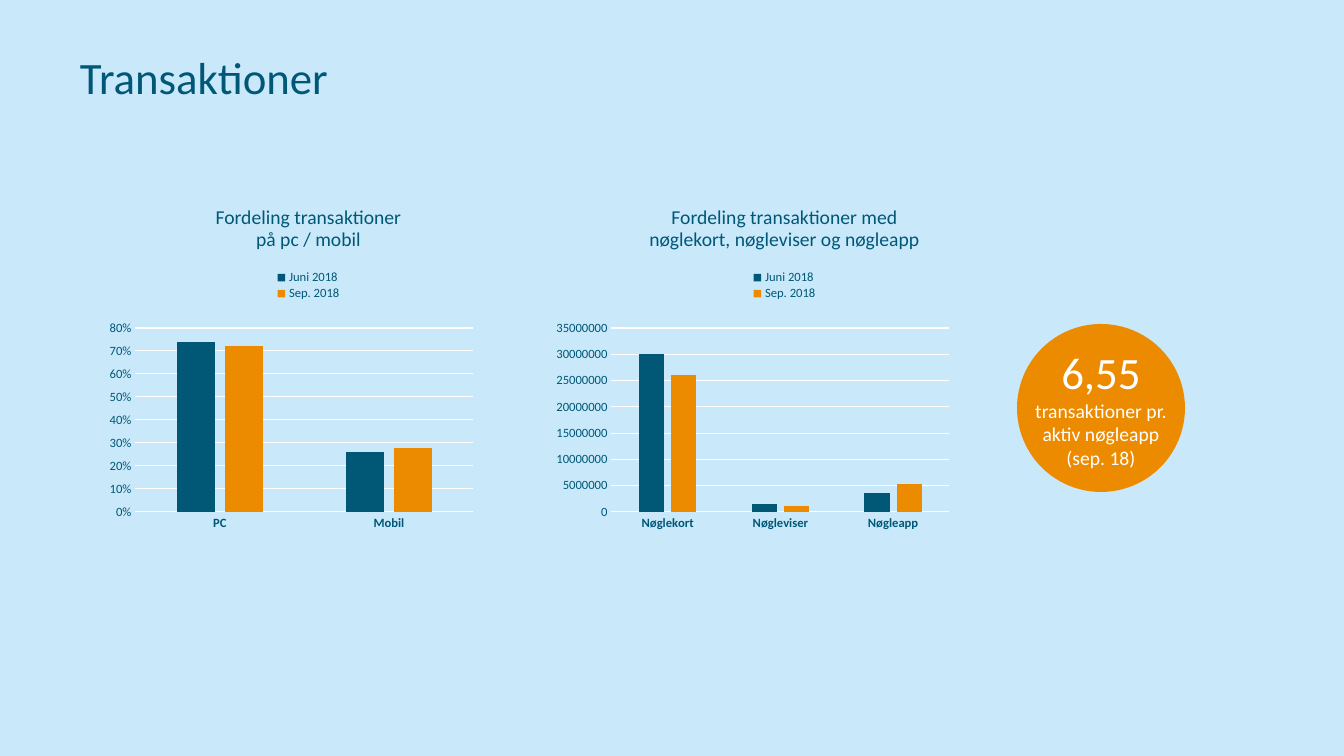
from dataclasses import dataclass

from lxml import etree
from pptx import Presentation
from pptx import util as u
from pptx.chart.data import CategoryChartData
from pptx.dml.color import RGBColor
from pptx.enum import chart as ch
from pptx.enum import shapes, text
from pptx.oxml import parse_xml
from pptx.oxml.ns import nsdecls, qn

EMU_PER_PX = 914400 / 100.8


@dataclass(frozen=True)
class Theme:
    font: str = "Calibri"
    background: RGBColor = RGBColor(0xC9, 0xE9, 0xFB)
    blue: RGBColor = RGBColor(0x00, 0x57, 0x76)
    orange: RGBColor = RGBColor(0xED, 0x8B, 0x00)
    white: RGBColor = RGBColor(0xFF, 0xFF, 0xFF)
    large: int = 32
    body: int = 14
    small: int = 9


THEME = Theme()


def px(length):
    return u.Emu(round(length * EMU_PER_PX))


def style_font(font, size, color, bold=False):
    font.name, font.size, font.bold = THEME.font, u.Pt(size), bold
    font.color.rgb = color


def add_text(slide, box, lines, color, align=text.PP_ALIGN.LEFT,
             spacing=1.0, inset=0, anchor=text.MSO_ANCHOR.TOP):
    """Place a text box; lines holds one (wording, size) pair per paragraph."""
    frame = slide.shapes.add_textbox(*map(px, box)).text_frame
    frame.word_wrap = True
    frame.vertical_anchor = anchor
    frame.margin_left = frame.margin_right = px(inset)
    frame.margin_top = frame.margin_bottom = px(inset // 2)
    for index, (wording, size) in enumerate(lines):
        paragraph = frame.paragraphs[0] if index == 0 else frame.add_paragraph()
        paragraph.text = wording
        paragraph.alignment = align
        paragraph.line_spacing = spacing
        style_font(paragraph.font, size, color)


def set_layout(element, x, y, width, height, inner=False):
    """Fix a chart part's place as fractions of the chart area."""
    for old in element.findall(qn("c:layout")):
        element.remove(old)
    layout = parse_xml(f"<c:layout {nsdecls('c')}><c:manualLayout/></c:layout>")
    values = [("layoutTarget", "inner")] if inner else []
    values += [("xMode", "edge"), ("yMode", "edge"),
               ("x", x), ("y", y), ("w", width), ("h", height)]
    for name, value in values:
        etree.SubElement(layout[0], qn(f"c:{name}")).set("val", str(value))
    # A legend's layout follows its position; a plot area's comes first.
    element.insert(0 if inner else 1, layout)


def style_line(line):
    line.color.rgb = THEME.white
    line.width = u.Pt(0.75)


def style_axes(chart, number_format):
    for axis in (chart.category_axis, chart.value_axis):
        axis.major_tick_mark = axis.minor_tick_mark = ch.XL_TICK_MARK.NONE
        style_font(axis.tick_labels.font, THEME.small, THEME.blue,
                   bold=axis is not chart.value_axis)
    category_axis, value_axis = chart.category_axis, chart.value_axis
    style_font(category_axis.tick_labels.font, THEME.small, THEME.blue, bold=True)
    style_font(value_axis.tick_labels.font, THEME.small, THEME.blue)
    style_line(category_axis.format.line)
    style_line(value_axis.major_gridlines.format.line)
    value_axis.format.line.fill.background()
    value_axis.tick_labels.number_format = number_format
    value_axis.tick_labels.number_format_is_linked = False


def add_column_chart(slide, box, heading, categories, june, september,
                     number_format, maximum, step):
    """Place a heading and, below it, columns for the two months."""
    left, top, width, height = box
    add_text(slide, (left + 72, top, width - 72, 33), [(heading, THEME.body)],
             THEME.blue, text.PP_ALIGN.CENTER, spacing=0.9)

    data = CategoryChartData(number_format=number_format)
    data.categories = categories
    data.add_series("Juni 2018", june)
    data.add_series("Sep. 2018", september)
    chart = slide.shapes.add_chart(
        ch.XL_CHART_TYPE.COLUMN_CLUSTERED,
        *map(px, (left, top + 17, width, height - 17)), data).chart
    style_font(chart.font, THEME.small, THEME.blue)
    chart.has_title = False
    style_axes(chart, number_format)
    chart.value_axis.minimum_scale = 0
    chart.value_axis.maximum_scale = maximum
    chart.value_axis.major_unit = step

    plot = chart.plots[0]
    plot.gap_width, plot.overlap = 219, -27
    plot.vary_by_categories = False
    for series, color in zip(plot.series, (THEME.blue, THEME.orange)):
        series.format.fill.solid()
        series.format.fill.fore_color.rgb = color
    set_layout(chart.plots[0]._element.getparent(), 0.16, 0.28, 0.84, 0.5, inner=True)

    chart.has_legend = True
    legend = chart.legend
    legend.position = ch.XL_LEGEND_POSITION.BOTTOM
    legend.include_in_layout = False
    style_font(legend.font, THEME.small, THEME.blue)
    set_layout(legend._element, 0.5, 0.12, 0.18, 0.09)


def add_key_figure(slide, box):
    left, top, width, height = box
    circle = slide.shapes.add_shape(shapes.MSO_SHAPE.OVAL, *map(px, box))
    circle.shadow.inherit = False
    circle.fill.solid()
    circle.fill.fore_color.rgb = THEME.orange
    circle.line.fill.background()
    lines = [("6,55", THEME.large),
             ("transaktioner pr. aktiv nøgleapp", THEME.body),
             ("(sep. 18)", THEME.body)]
    add_text(slide, (left, top + 15, width, height - 32), lines, THEME.white,
             text.PP_ALIGN.CENTER, inset=10, anchor=text.MSO_ANCHOR.MIDDLE)


def build_transactions_slide(presentation):
    slide = presentation.slides.add_slide(presentation.slide_layouts[6])
    slide.background.fill.solid()
    slide.background.fill.fore_color.rgb = THEME.background
    add_text(slide, (80, 59, 1185, 127), [("Transaktioner", THEME.large)],
             THEME.blue, spacing=0.83)
    add_column_chart(
        slide, (71, 208, 403, 385), "Fordeling transaktioner\vpå pc / mobil",
        ["PC", "Mobil"], (0.74, 0.26), (0.72, 0.28), "0%", 0.8, 0.1)
    add_column_chart(
        slide, (547, 208, 403, 385),
        "Fordeling transaktioner med\vnøglekort, nøgleviser og nøgleapp",
        ["Nøglekort", "Nøgleviser", "Nøgleapp"],
        (30000000, 1500000, 3600000), (26000000, 1100000, 5300000),
        "0", 35000000, 5000000)
    add_key_figure(slide, (1017, 324, 168, 168))


def main():
    presentation = Presentation()
    presentation.slide_width, presentation.slide_height = px(1344), px(756)
    build_transactions_slide(presentation)
    presentation.save("out.pptx")


if __name__ == "__main__":
    main()
